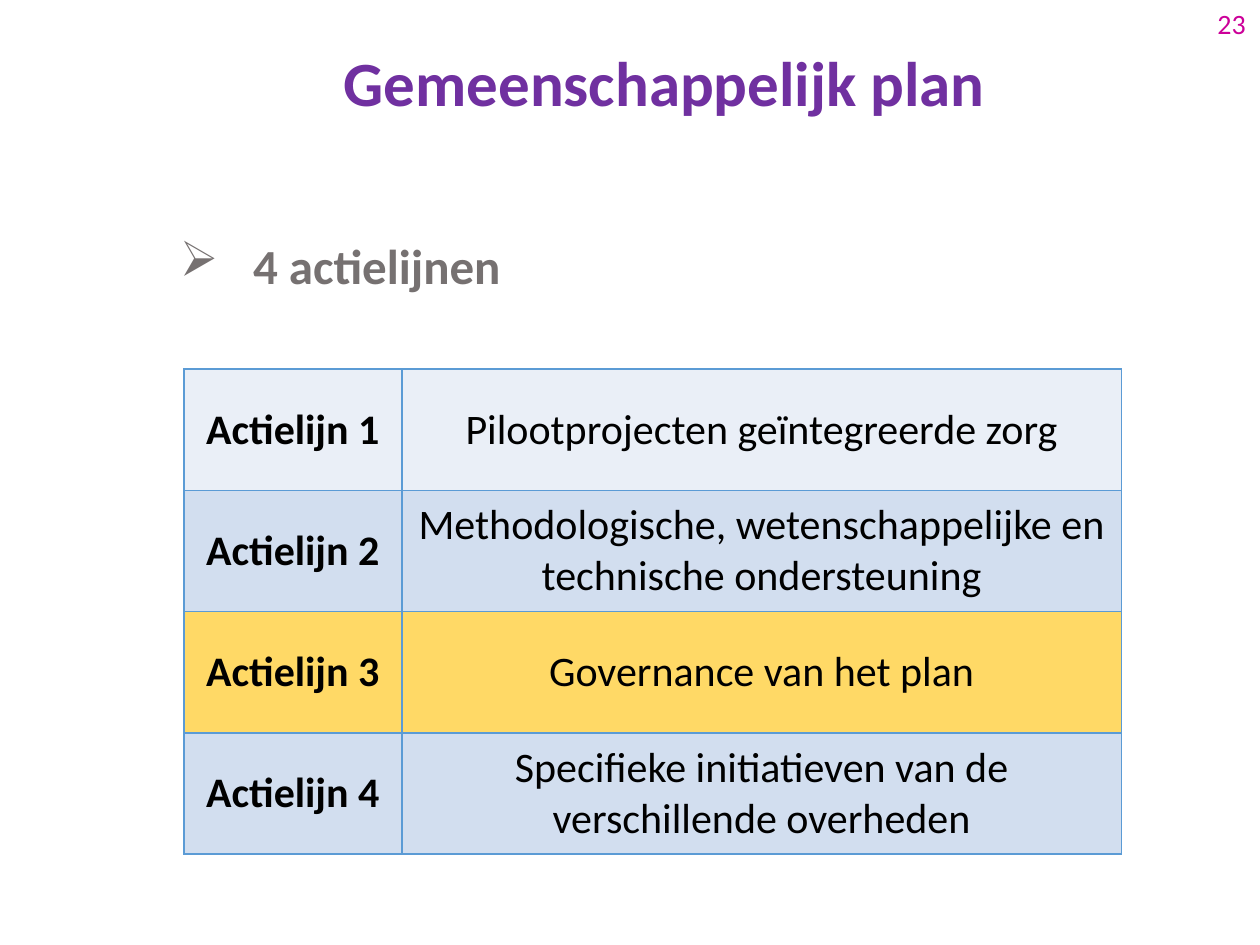
from lxml.etree import SubElement
from pptx import Presentation
from pptx.dml.color import RGBColor
from pptx.enum.text import MSO_ANCHOR, PP_ALIGN
from pptx.oxml.ns import qn
from pptx.util import Inches, Pt

PURPLE = RGBColor(0x70, 0x30, 0xA0)
GREY = RGBColor(0x76, 0x71, 0x71)
MAGENTA = RGBColor(0xCC, 0x00, 0x99)
BLACK = RGBColor(0x00, 0x00, 0x00)
BORDER_BLUE = RGBColor(0x5B, 0x9B, 0xD5)
PALE_BLUE = RGBColor(0xEA, 0xEF, 0xF7)
LIGHT_BLUE = RGBColor(0xD2, 0xDE, 0xEF)
YELLOW = RGBColor(0xFF, 0xD9, 0x66)

ACTION_LINES = [
    ("Pilootprojecten geïntegreerde zorg", PALE_BLUE),
    ("Methodologische, wetenschappelijke en technische ondersteuning", LIGHT_BLUE),
    ("Governance van het plan", YELLOW),
    ("Specifieke initiatieven van de verschillende overheden", LIGHT_BLUE),
]


def style_text(paragraph, size, color, bold=False):
    for span in paragraph.runs:
        span.font.name = "Calibri"
        span.font.size = Pt(size)
        span.font.bold = bold
        span.font.color.rgb = color


def add_borders(cell):
    properties = cell._tc.get_or_add_tcPr()
    for position, side in enumerate(("lnL", "lnR", "lnT", "lnB")):
        line = properties.makeelement(qn(f"a:{side}"), {"w": str(Pt(1))})
        fill = SubElement(line, qn("a:solidFill"))
        SubElement(fill, qn("a:srgbClr"), val=str(BORDER_BLUE))
        properties.insert(position, line)


deck = Presentation()
deck.slide_width = Inches(10)
deck.slide_height = Inches(7.5)
page = deck.slides.add_slide(deck.slide_layouts[5])

title = page.shapes.title
title.left, title.top = Inches(2.38), Inches(0)
title.width, title.height = Inches(5.79), Inches(1.36)
title.text_frame.text = "Gemeenschappelijk plan"
title.text_frame.vertical_anchor = MSO_ANCHOR.MIDDLE
paragraph = title.text_frame.paragraphs[0]
paragraph.alignment = PP_ALIGN.CENTER
paragraph.line_spacing = 0.9
style_text(paragraph, 36, PURPLE, bold=True)

heading_box = page.shapes.add_textbox(Inches(1.33), Inches(1.87), Inches(7.29), Inches(0.7))
heading_box.text_frame.word_wrap = True
heading_box.text_frame.text = "4 actielijnen"
paragraph = heading_box.text_frame.paragraphs[0]
properties = paragraph._p.get_or_add_pPr()
properties.set("marL", str(Inches(0.58)))
properties.set("indent", str(-Inches(0.58)))
SubElement(properties, qn("a:buSzPts"), val="3200")
SubElement(properties, qn("a:buChar"), char="➢")
paragraph.line_spacing = 0.9
style_text(paragraph, 28, GREY, bold=True)

table = page.shapes.add_table(
    len(ACTION_LINES), 2, Inches(1.46), Inches(2.93), Inches(7.44), Inches(3.85)
).table
table.first_row = False
table.horz_banding = False
table.columns[0].width = Inches(1.73)
table.columns[1].width = Inches(5.71)

for index, (description, color) in enumerate(ACTION_LINES):
    table.rows[index].height = Inches(3.85 / len(ACTION_LINES))
    for column, text in enumerate((f"Actielijn {index + 1}", description)):
        cell = table.cell(index, column)
        cell.text_frame.text = text
        cell.vertical_anchor = MSO_ANCHOR.MIDDLE
        cell.margin_left = cell.margin_right = Inches(0.08)
        cell.fill.solid()
        cell.fill.fore_color.rgb = color
        add_borders(cell)
        paragraph = cell.text_frame.paragraphs[0]
        paragraph.alignment = PP_ALIGN.CENTER
        style_text(paragraph, 24, BLACK, bold=column == 0)

number_box = page.shapes.add_textbox(Inches(9.55), Inches(0), Inches(0.45), Inches(0.4))
number_box.text_frame.text = "23"
paragraph = number_box.text_frame.paragraphs[0]
paragraph.alignment = PP_ALIGN.CENTER
style_text(paragraph, 16, MAGENTA)

deck.save("out.pptx")
